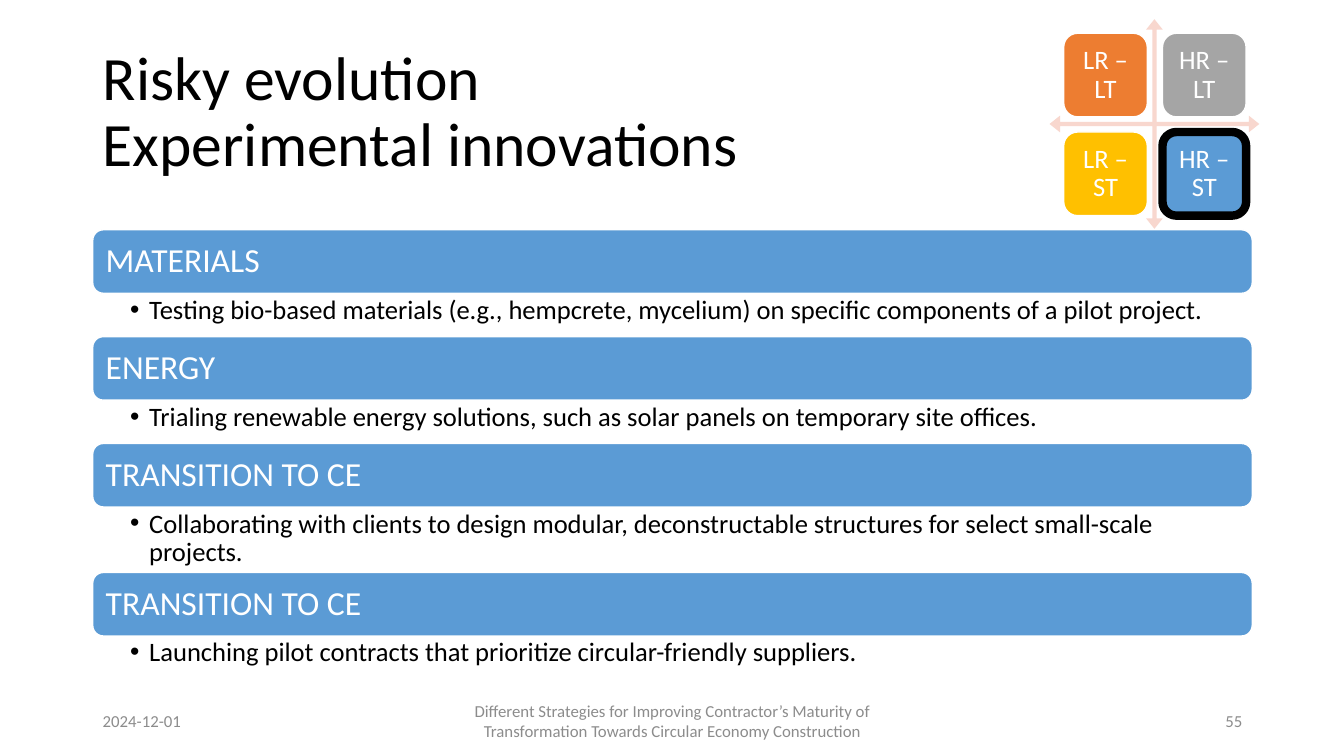
from dataclasses import dataclass

from lxml import etree
from pptx import Presentation
from pptx import util as u
from pptx.dml.color import RGBColor
from pptx.enum import shapes, text
from pptx.oxml import ns


@dataclass(frozen=True)
class Theme:
    font: str = "Calibri"
    black: str = "000000"
    white: str = "FFFFFF"
    blue: str = "5B9BD5"
    orange: str = "ED7D31"
    gray: str = "A5A5A5"
    yellow: str = "FFC000"
    pink: str = "F8D7CE"
    footer: str = "8C8C8C"
    title_size: float = 44
    heading_size: float = 24
    body_size: float = 19
    footer_size: float = 12


THEME = Theme()
LEFT, WIDTH = 0.92, 11.5
BAR_TOP, BAR_HEIGHT, LINE_HEIGHT, EXTRA_LINE = 2.28, 0.63, 0.43, 0.22
TILE_LEFT, TILE_TOP, TILE_SIZE, TILE_STEP = 10.55, 0.33, 0.83, 0.98

TOPICS = [
    ("MATERIALS", "Testing bio-based materials (e.g., hempcrete, mycelium) on specific components of a pilot project.", 1),
    ("ENERGY", "Trialing renewable energy solutions, such as solar panels on temporary site offices.", 1),
    ("TRANSITION TO CE", "Collaborating with clients to design modular, deconstructable structures for select small-scale projects.", 2),
    ("TRANSITION TO CE", "Launching pilot contracts that prioritize circular-friendly suppliers.", 1),
]
TILES = [
    ("LR – LT", THEME.orange, THEME.white, 1),
    ("HR – LT", THEME.gray, THEME.white, 1),
    ("LR – ST", THEME.yellow, THEME.white, 1),
    ("HR – ST", THEME.blue, THEME.black, 6),
]
FOOTERS = [
    ("2024-12-01", LEFT, 3, text.PP_ALIGN.LEFT),
    ("Different Strategies for Improving Contractor’s Maturity of Transformation Towards Circular Economy Construction",
     4.42, 4.5, text.PP_ALIGN.CENTER),
    ("55", 9.42, 3, text.PP_ALIGN.RIGHT),
]


def write(shape, content, size, color, align=text.PP_ALIGN.LEFT,
          anchor=text.MSO_ANCHOR.MIDDLE, insets=(0.1, 0.05, 0.1, 0.05),
          spacing=0.9, bullet=False):
    frame = shape.text_frame
    frame.word_wrap = True
    frame.auto_size = text.MSO_AUTO_SIZE.NONE
    frame.vertical_anchor = anchor
    (frame.margin_left, frame.margin_top,
     frame.margin_right, frame.margin_bottom) = map(u.Inches, insets)
    paragraph = frame.paragraphs[0]
    paragraph.text = content
    paragraph.alignment = align
    paragraph.line_spacing = spacing
    if bullet:
        add_bullet(paragraph)
    for run in paragraph.runs:
        run.font.name = THEME.font
        run.font.size = u.Pt(size)
        run.font.color.rgb = RGBColor.from_string(color)


def add_bullet(paragraph):
    properties = paragraph._p.get_or_add_pPr()
    properties.set("marL", str(u.Inches(0.19)))
    properties.set("indent", str(u.Inches(-0.19)))
    etree.SubElement(properties, ns.qn("a:buFont")).set("typeface", "Arial")
    etree.SubElement(properties, ns.qn("a:buChar")).set("char", "•")


def add_box(slide, kind, left, top, width, height, fill, line=None, line_width=1):
    shape = slide.shapes.add_shape(kind, *map(u.Inches, (left, top, width, height)))
    shape.shadow.inherit = False
    shape.fill.solid()
    shape.fill.fore_color.rgb = RGBColor.from_string(fill)
    if line:
        shape.line.color.rgb = RGBColor.from_string(line)
        shape.line.width = u.Pt(line_width)
    else:
        shape.line.fill.background()
    return shape


def add_text(slide, content, left, top, width, height, **style):
    box = slide.shapes.add_textbox(*map(u.Inches, (left, top, width, height)))
    write(box, content, **style)


def add_title(slide, content):
    title = slide.shapes.title
    title.left, title.top, title.width, title.height = map(u.Inches, (LEFT, 0.4, WIDTH, 1.45))
    write(title, content, THEME.title_size, THEME.black)


def add_topics(slide):
    top = BAR_TOP
    for heading, detail, lines in TOPICS:
        bar = add_box(slide, shapes.MSO_SHAPE.ROUNDED_RECTANGLE,
                      LEFT, top, WIDTH, BAR_HEIGHT, THEME.blue, THEME.white)
        write(bar, heading, THEME.heading_size, THEME.white, insets=(0.1,) * 4)
        top += BAR_HEIGHT
        height = LINE_HEIGHT + EXTRA_LINE * (lines - 1)
        add_text(slide, detail, LEFT, top, WIDTH, height,
                 size=THEME.body_size, color=THEME.black, anchor=text.MSO_ANCHOR.TOP,
                 insets=(0.37, 0.03, 0.19, 0.03), bullet=True)
        top += height


def add_matrix(slide):
    axes = add_box(slide, shapes.MSO_SHAPE.QUAD_ARROW, 10.41, 0.19, 2.08, 2.08, THEME.pink)
    for index, value in enumerate((0.02, 0.04, 0.05)):
        axes.adjustments[index] = value
    for index, (label, fill, line, line_width) in enumerate(TILES):
        row, column = divmod(index, 2)
        tile = add_box(slide, shapes.MSO_SHAPE.ROUNDED_RECTANGLE,
                       TILE_LEFT + column * TILE_STEP, TILE_TOP + row * TILE_STEP,
                       TILE_SIZE, TILE_SIZE, fill, line, line_width)
        write(tile, label, THEME.body_size, THEME.white,
              align=text.PP_ALIGN.CENTER, insets=(0.08,) * 4)


def add_footers(slide):
    for content, left, width, align in FOOTERS:
        add_text(slide, content, left, 6.95, width, 0.4, size=THEME.footer_size,
                 color=THEME.footer, align=align, spacing=1.0)


def main():
    presentation = Presentation()
    presentation.slide_width = u.Inches(13.33)
    presentation.slide_height = u.Inches(7.5)
    slide = presentation.slides.add_slide(presentation.slide_layouts[5])
    add_title(slide, "Risky evolution\vExperimental innovations")
    add_topics(slide)
    add_footers(slide)
    add_matrix(slide)
    presentation.save("out.pptx")


if __name__ == "__main__":
    main()
